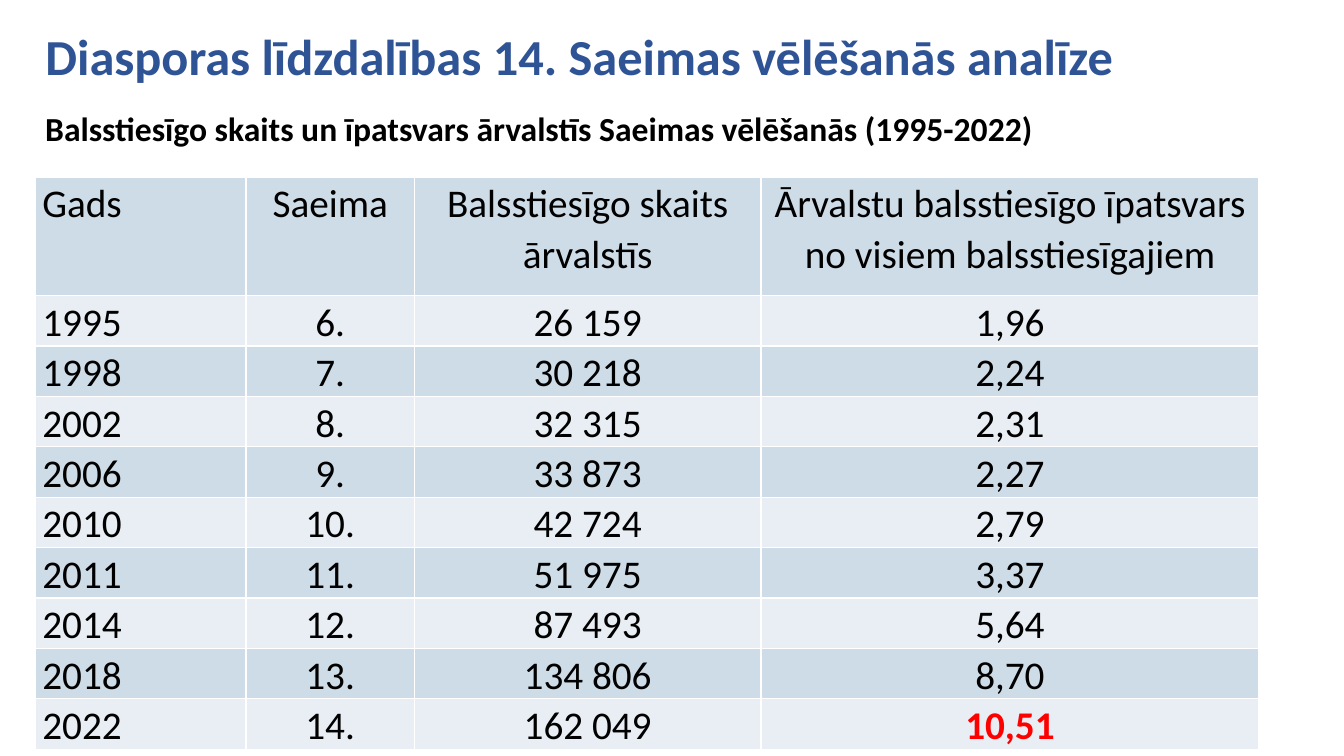
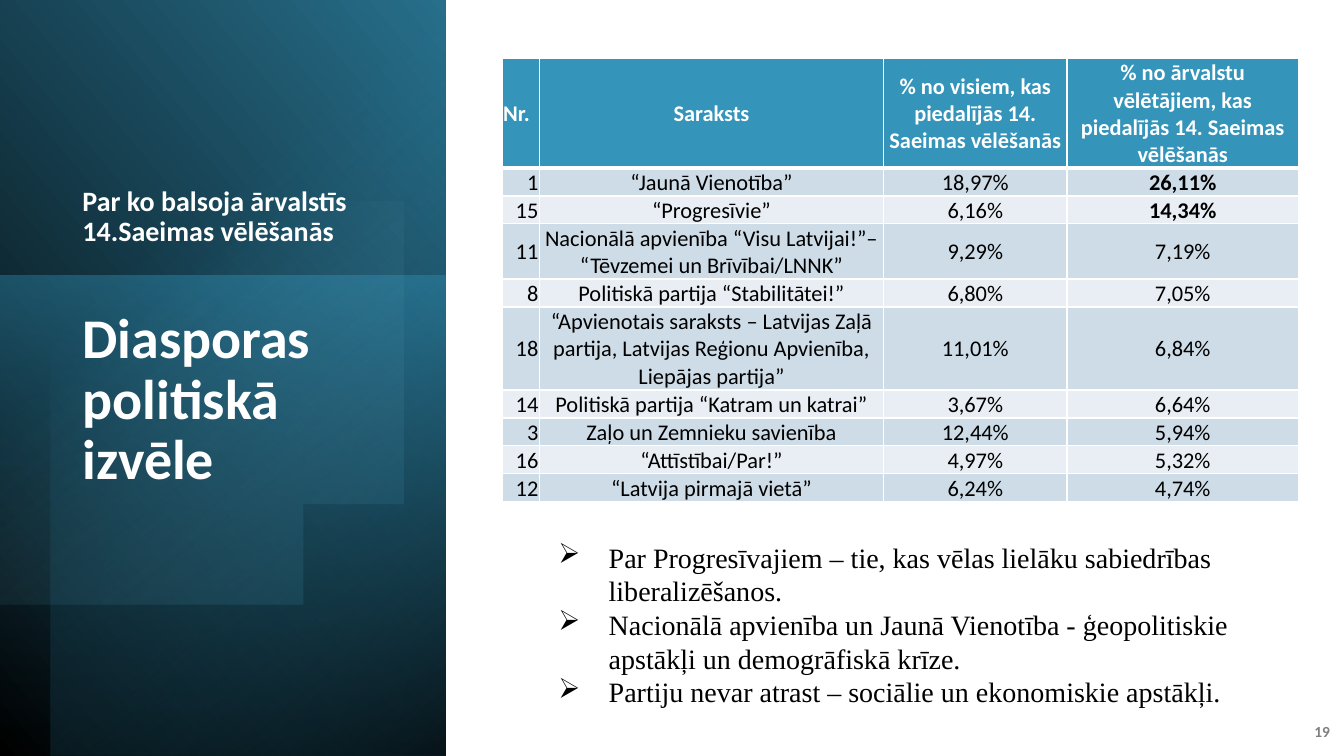
import math
import pptx
import pptx.util
import pptx.oxml
import pptx.oxml.ns
import pptx.dml.color
import pptx.enum.shapes
import pptx.enum.text

WIDTH, HEIGHT = 13.33, 7.5
COLORS = {
    "heading": "2F5496", "text": "000000", "white": "FFFFFF", "alert": "FF0000",
    "muted": "808080", "accent": "3494BA", "deep": "276F8B", "dark": "1A4A5D",
    "pale": "7FC1DB", "band": "CEDCE7", "light": "E8EEF3",
}
SANS, SERIF = "Calibri", "Times New Roman"
LEFT, CENTER, RIGHT = (pptx.enum.text.PP_ALIGN.LEFT, pptx.enum.text.PP_ALIGN.CENTER,
                       pptx.enum.text.PP_ALIGN.RIGHT)
TOP, MIDDLE, BOTTOM = (pptx.enum.text.MSO_ANCHOR.TOP, pptx.enum.text.MSO_ANCHOR.MIDDLE,
                       pptx.enum.text.MSO_ANCHOR.BOTTOM)
MARGIN = 2.63
PANEL_WIDTH = 33.16
PANEL_TEXT_LEFT = 5.4

VOTERS = [
    ("Gads", "Saeima", "Balsstiesīgo skaits ārvalstīs",
     "Ārvalstu balsstiesīgo īpatsvars no visiem balsstiesīgajiem"),
    ("1995", "6.", "26 159", "1,96"),
    ("1998", "7.", "30 218", "2,24"),
    ("2002", "8.", "32 315", "2,31"),
    ("2006", "9.", "33 873", "2,27"),
    ("2010", "10.", "42 724", "2,79"),
    ("2011", "11.", "51 975", "3,37"),
    ("2014", "12.", "87 493", "5,64"),
    ("2018", "13.", "134 806", "8,70"),
    ("2022", "14.", "162 049", "10,51"),
]
PARTIES = [
    ("Nr.", "Saraksts", "% no visiem, kas piedalījās 14. Saeimas vēlēšanās",
     "% no ārvalstu vēlētājiem, kas piedalījās 14. Saeimas vēlēšanās"),
    ("1", "“Jaunā Vienotība”", "18,97%", "26,11%"),
    ("15", "“Progresīvie”", "6,16%", "14,34%"),
    ("11", "Nacionālā apvienība “Visu Latvijai!”– “Tēvzemei un Brīvībai/LNNK”",
     "9,29%", "7,19%"),
    ("8", "Politiskā partija “Stabilitātei!”", "6,80%", "7,05%"),
    ("18", "“Apvienotais saraksts – Latvijas Zaļā partija, Latvijas Reģionu Apvienība, "
     "Liepājas partija”", "11,01%", "6,84%"),
    ("14", "Politiskā partija “Katram un katrai”", "3,67%", "6,64%"),
    ("3", "Zaļo un Zemnieku savienība", "12,44%", "5,94%"),
    ("16", "“Attīstībai/Par!”", "4,97%", "5,32%"),
    ("12", "“Latvija pirmajā vietā”", "6,24%", "4,74%"),
]
REASONS = [
    "Par Progresīvajiem – tie, kas vēlas lielāku sabiedrības liberalizēšanos.",
    "Nacionālā apvienība un Jaunā Vienotība - ģeopolitiskie apstākļi un demogrāfiskā krīze.",
    "Partiju nevar atrast – sociālie un ekonomiskie apstākļi.",
]


def across(percent):
    return pptx.util.Inches(WIDTH * percent / 100)


def down(percent):
    return pptx.util.Inches(HEIGHT * percent / 100)


def area(left, top, width, height):
    return across(left), down(top), across(width), down(height)


def rgb(name):
    return pptx.dml.color.RGBColor.from_string(COLORS[name])


def drawing(tag, attributes="", content=""):
    return pptx.oxml.parse_xml(
        f'<a:{tag} {pptx.oxml.ns.nsdecls("a")} {attributes}>{content}</a:{tag}>')


def style(para, size, color="text", bold=False, align=LEFT, font=SANS, spacing=1.0):
    para.alignment = align
    para.line_spacing = spacing
    para.space_before = pptx.util.Pt(0)
    para.font.name = font
    para.font.size = pptx.util.Pt(size)
    para.font.bold = bold
    para.font.color.rgb = rgb(color)


def add_title(page, text, place, size, color, anchor):
    title = page.shapes.title
    page.shapes.element.append(title.element)
    title.left, title.top, title.width, title.height = area(*place)
    frame = title.text_frame
    frame.text = text
    frame.word_wrap = True
    frame.auto_size = pptx.enum.text.MSO_AUTO_SIZE.NONE
    frame.vertical_anchor = anchor
    style(frame.paragraphs[0], size, color, True, spacing=0.9)


def add_text(page, lines, place, size, anchor=TOP, bullet=None, **look):
    frame = page.shapes.add_textbox(*area(*place)).text_frame
    frame.word_wrap = True
    frame.vertical_anchor = anchor
    for index, line in enumerate(lines):
        para = frame.paragraphs[0] if index == 0 else frame.add_paragraph()
        para.text = line
        if bullet:
            indent = pptx.util.Inches(0.5)
            properties = para._p.get_or_add_pPr()
            properties.set("marL", str(indent))
            properties.set("indent", str(-indent))
            properties.append(drawing("buChar", f'char="{bullet}"'))
        style(para, size, **look)


def set_borders(cell, top=1, bottom=1):
    properties = cell._tc.get_or_add_tcPr()
    line = f'<a:solidFill><a:srgbClr val="{COLORS["white"]}"/></a:solidFill>'
    widths = {"lnL": 1, "lnR": 1, "lnT": top, "lnB": bottom}
    for index, (side, points) in enumerate(widths.items()):
        properties.insert(index, drawing(side, f'w="{pptx.util.Pt(points)}"', line))


def add_grid(page, records, place, columns, heights, insets, anchor, dress):
    left, top, width = place
    table = page.shapes.add_table(
        len(records), len(columns), *area(left, top, width, sum(heights))).table
    for column, share in zip(table.columns, columns):
        column.width = int(across(width) * share / sum(columns))
    for row_index, (record, height) in enumerate(zip(records, heights)):
        table.rows[row_index].height = down(height)
        for column_index, text in enumerate(record):
            cell = table.cell(row_index, column_index)
            cell.text = text
            cell.vertical_anchor = anchor
            cell.margin_left = cell.margin_right = pptx.util.Inches(insets[0])
            cell.margin_top = pptx.util.Inches(insets[1])
            cell.margin_bottom = 0
            cell.fill.solid()
            fill, edges, look = dress(row_index, column_index)
            cell.fill.fore_color.rgb = rgb(fill)
            set_borders(cell, **edges)
            style(cell.text_frame.paragraphs[0], **look)


def band(row):
    return "light" if row % 2 else "band"


def dress_voters(row, column):
    look = dict(size=28, align=CENTER if column else LEFT, spacing=1.07)
    if (row, column) == (len(VOTERS) - 1, 3):
        look.update(color="alert", bold=True)
    return band(row), {}, look


def dress_parties(row, column):
    look = dict(size=16, align=CENTER if column else RIGHT)
    if row == 0:
        look.update(color="white", bold=True, align=CENTER if column else LEFT)
        return "accent", {"bottom": 3}, look
    look["bold"] = column == 3 and row <= 2
    return band(row + 1), {"top": 3} if row == 1 else {}, look


def paint_gradient(shape, angle, stops):
    shape.shadow.inherit = False
    shape.line.fill.background()
    shape.fill.solid()
    colors = "".join(
        f'<a:gs pos="{position * 1000}"><a:srgbClr val="{COLORS[color]}">'
        f'<a:alpha val="{opacity * 1000}"/></a:srgbClr></a:gs>'
        for position, color, opacity in stops)
    gradient = drawing("gradFill", 'rotWithShape="1"',
                       f'<a:gsLst>{colors}</a:gsLst><a:lin ang="{angle * 60000}" scaled="0"/>')
    properties = shape.element.spPr
    properties.replace(properties.find(pptx.oxml.ns.qn("a:solidFill")), gradient)


def add_gradient_block(page, place, angle, stops):
    block = page.shapes.add_shape(pptx.enum.shapes.MSO_SHAPE.RECTANGLE, *area(*place))
    paint_gradient(block, angle, stops)


def add_cut_circle(page, center_x, center_y, radius, angle, stops):
    limit = math.acos(-center_x / radius)
    steps = 120
    turns = [limit * (2 * step / steps - 1) for step in range(steps + 1)]
    points = [(center_x + radius * math.cos(turn), center_y + radius * math.sin(turn))
              for turn in turns]
    builder = page.shapes.build_freeform(*points[0], scale=pptx.util.Inches(1))
    builder.add_line_segments(points[1:], close=True)
    paint_gradient(builder.convert_to_shape(), angle, stops)


def add_panel(page):
    add_gradient_block(page, (0, 0, PANEL_WIDTH, 100), 320,
                       [(0, "text", 100), (100, "deep", 100)])
    add_gradient_block(page, (0, 36.5, PANEL_WIDTH, 63.5), 100,
                       [(0, "accent", 50), (100, "dark", 0)])
    add_gradient_block(page, (3.75, 0, PANEL_WIDTH - 3.75, 100), 230,
                       [(0, "text", 59), (69, "accent", 0)])
    add_cut_circle(page, 1.43, 3.47, 2.63, 52, [(39, "pale", 0), (100, "deep", 26)])


def build_voters(page):
    add_title(page, "Diasporas līdzdalības 14. Saeimas vēlēšanās analīze",
              (MARGIN, 2, 96.1, 11.6), 36, "heading", MIDDLE)
    add_text(page, ["Balsstiesīgo skaits un īpatsvars ārvalstīs Saeimas vēlēšanās (1995-2022)"],
             (MARGIN, 13.6, 77.6, 6.7), 24, bold=True)
    add_grid(page, VOTERS, (MARGIN, 23.4, 91.05), (2.09, 1.67, 3.44, 4.94),
             [15.7] + [6.67] * 9, (0.07, 0), TOP, dress_voters)


def build_choice(page):
    add_panel(page)
    add_title(page, "Diasporas politiskā izvēle",
              (PANEL_TEXT_LEFT, 40.4, 23.6, 44.8), 40, "white", TOP)
    add_text(page, ["Par ko balsoja ārvalstīs 14.Saeimas vēlēšanās"],
             (PANEL_TEXT_LEFT, 11.7, 23.9, 21.75), 20, BOTTOM,
             color="white", bold=True, spacing=0.9)
    add_text(page, ["19"], (96, 94.1, 3.7, 5.3), 11, MIDDLE,
             color="muted", bold=True, align=RIGHT)
    single, double, triple = 3.67, 7.3, 11
    add_grid(page, PARTIES, (37.36, 7.73, 59.26), (0.37, 3.42, 1.82, 2.3),
             [14.5, single, single, double, single, triple] + [single] * 4,
             (0.01, 0.01), MIDDLE, dress_parties)
    add_text(page, REASONS, (40.8, 70.8, 53.2, 23.7), 20, bullet="➢", font=SERIF)


def main():
    deck = pptx.Presentation()
    deck.slide_width = pptx.util.Inches(WIDTH)
    deck.slide_height = pptx.util.Inches(HEIGHT)
    for build in (build_voters, build_choice):
        build(deck.slides.add_slide(deck.slide_layouts[5]))
    deck.save("out.pptx")


if __name__ == "__main__":
    main()
